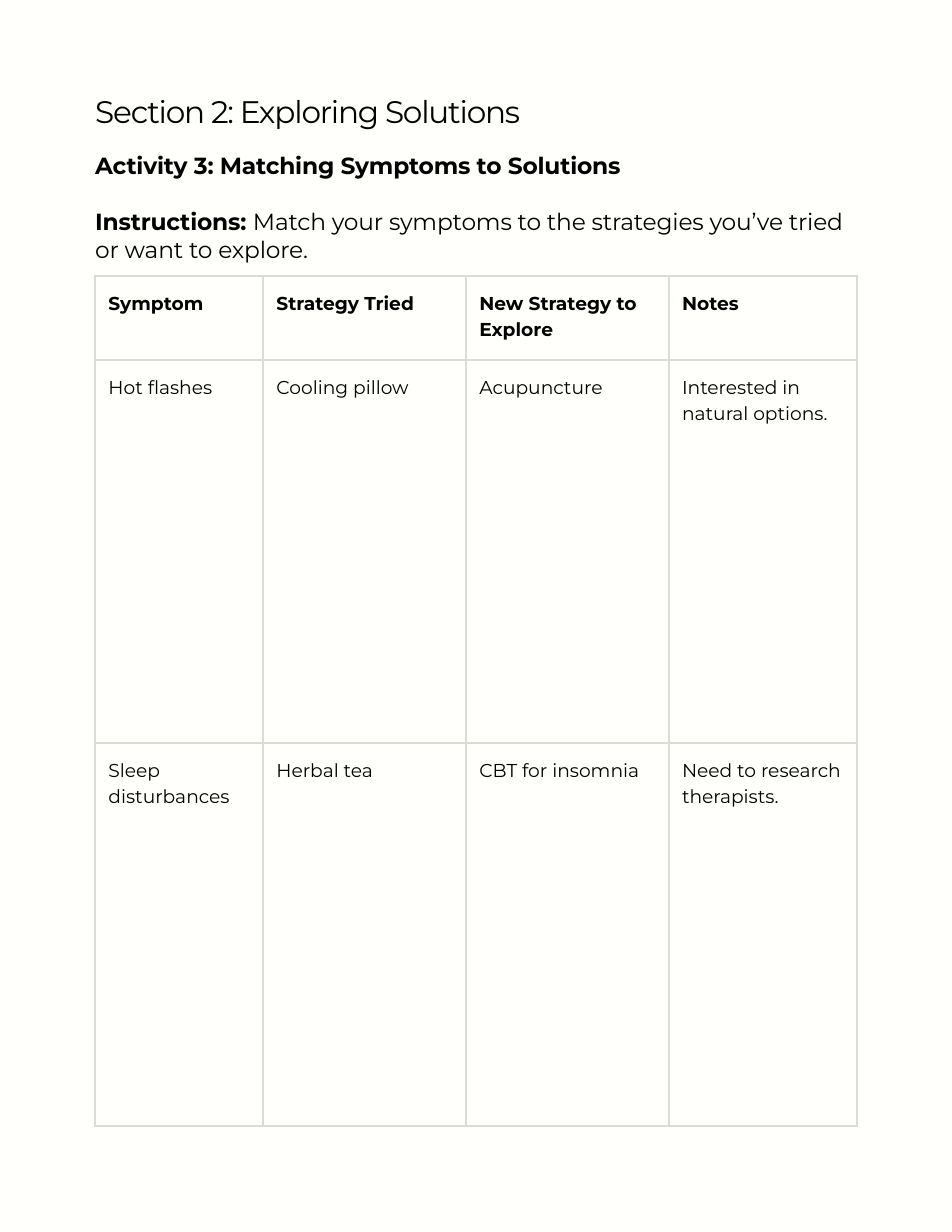
"""Build a worksheet page that matches symptoms to solutions."""
import pptx
import pptx.dml.color
import pptx.enum.text
import pptx.oxml
import pptx.oxml.ns
import pptx.util
from pptx.util import Cm

COLORS = {"page": "FFFFFC", "text": "000000", "border": "DBDBDB"}
FONT = "Montserrat"
LEFT, WIDTH = 2.16, 17.27
COLUMNS = [3.81, 4.6, 4.6, 4.27]
ROWS = [1.91, 8.69, 8.69]
CELLS = [
    ["Symptom", "Strategy Tried", "New Strategy to Explore", "Notes"],
    ["Hot flashes", "Cooling pillow", "Acupuncture", "Interested in natural options."],
    ["Sleep disturbances", "Herbal tea", "CBT for insomnia", "Need to research therapists."],
]


def rgb(name):
    return pptx.dml.color.RGBColor.from_string(COLORS[name])


def add_text(p, text, size=12, bold=False, color="text", tracking=0, leading=18, after=0):
    p.alignment = pptx.enum.text.PP_ALIGN.LEFT
    p.line_spacing = pptx.util.Pt(leading)
    p.space_before = pptx.util.Pt(0)
    p.space_after = pptx.util.Pt(after)
    r = p.add_run()
    r.text = text
    r.font.name = FONT
    r.font.size = pptx.util.Pt(size)
    r.font.bold = bold
    r.font.color.rgb = rgb(color)
    if tracking:
        r.font._element.set("spc", str(round(tracking * 100)))


class Page:
    def __init__(self, prs):
        self.inset = Cm(0.3)
        self.border = pptx.util.Pt(1.5)
        self.s = prs.slides.add_slide(prs.slide_layouts[5])
        self.s.background.fill.solid()
        self.s.background.fill.fore_color.rgb = rgb("page")

    def frame(self, sp):
        tf = sp.text_frame
        tf.word_wrap = True
        tf.auto_size = pptx.enum.text.MSO_AUTO_SIZE.NONE
        tf.vertical_anchor = pptx.enum.text.MSO_ANCHOR.TOP
        tf.margin_left = tf.margin_top = tf.margin_right = tf.margin_bottom = 0
        return tf

    def title(self, text, top, height):
        sp = self.s.shapes.title
        sp.left, sp.top, sp.width, sp.height = Cm(LEFT), Cm(top), Cm(WIDTH), Cm(height)
        add_text(self.frame(sp).paragraphs[0], text, size=20, tracking=-0.8)

    def activity(self, heading, label, text, top, height):
        sp = self.s.shapes.add_textbox(Cm(LEFT), Cm(top), Cm(WIDTH), Cm(height))
        tf = self.frame(sp)
        add_text(tf.paragraphs[0], heading, size=15, bold=True, tracking=-0.1, after=18)
        p = tf.add_paragraph()
        add_text(p, label, size=15, bold=True, tracking=-0.1)
        add_text(p, text, size=15, tracking=-0.1)

    def table(self, rows, top):
        shape = self.s.shapes.add_table(
            len(ROWS), len(COLUMNS), Cm(LEFT), Cm(top), Cm(sum(COLUMNS)), Cm(sum(ROWS)))
        table = shape.table
        table.first_row = table.horz_banding = False
        for column, width in zip(table.columns, COLUMNS):
            column.width = Cm(width)
        for i, (height, texts) in enumerate(zip(ROWS, rows)):
            table.rows[i].height = Cm(height)
            for j, text in enumerate(texts):
                self.cell(table.cell(i, j), text, bold=i == 0)

    def cell(self, cell, text, bold):
        cell.margin_left = cell.margin_right = self.inset
        cell.margin_top = cell.margin_bottom = self.inset
        cell.vertical_anchor = pptx.enum.text.MSO_ANCHOR.TOP
        add_text(cell.text_frame.paragraphs[0], text, bold=bold, leading=16.8)
        tc_pr = cell._tc.get_or_add_tcPr()
        for side in ("lnL", "lnR", "lnT", "lnB"):
            tc_pr.append(pptx.oxml.parse_xml(
                f'<a:{side} {pptx.oxml.ns.nsdecls("a")} w="{self.border}"><a:solidFill>'
                f'<a:srgbClr val="{COLORS["border"]}"/></a:solidFill></a:{side}>'))
        cell.fill.background()


def main():
    prs = pptx.Presentation()
    prs.slide_width, prs.slide_height = Cm(21.59), Cm(27.94)
    page = Page(prs)
    page.title("Section 2: Exploring Solutions", top=2.31, height=0.69)
    page.activity(
        "Activity 3: Matching Symptoms to Solutions",
        "Instructions: ",
        "Match your symptoms to the strategies you’ve tried or want to explore.",
        top=3.43, height=2.36)
    page.table(CELLS, top=6.25)
    prs.save("out.pptx")


if __name__ == "__main__":
    main()
